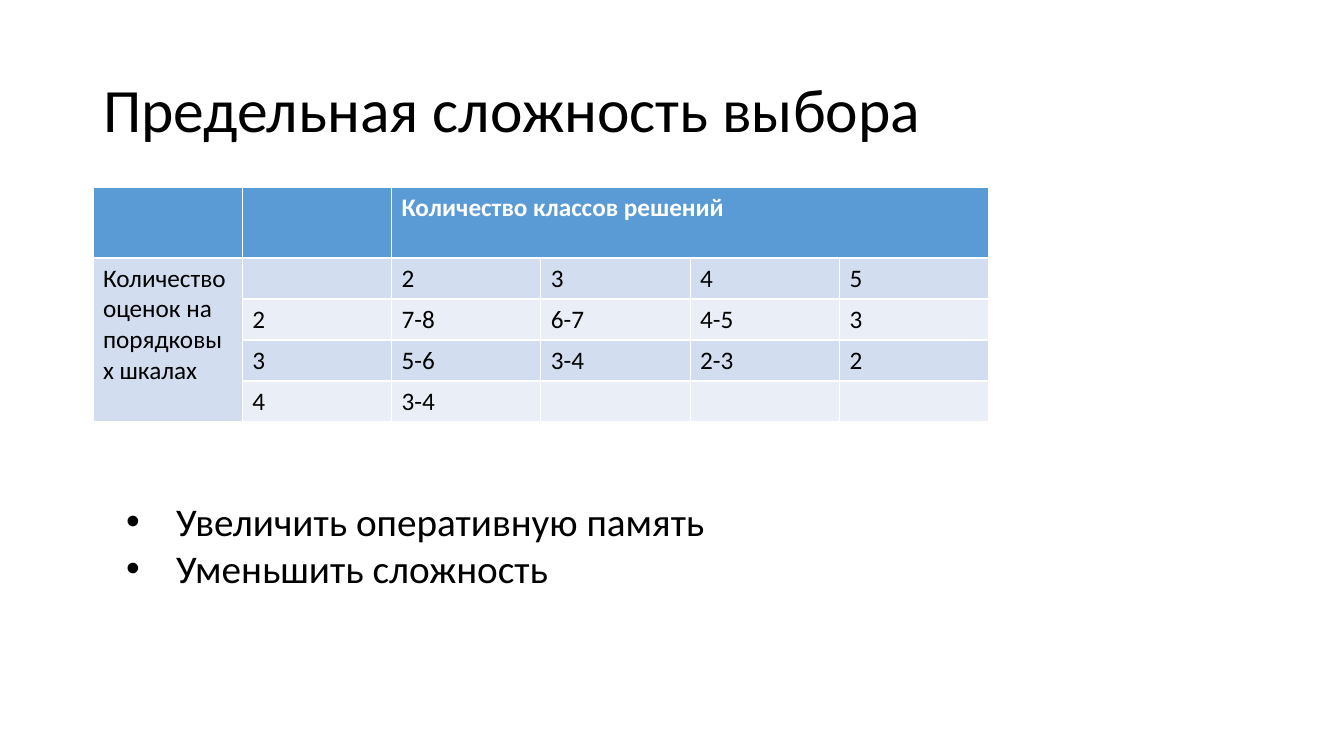
"""Builds the slide on the limits of choice complexity."""
from pptx import Presentation
from pptx.dml.color import RGBColor
from pptx.enum.text import MSO_ANCHOR, PP_ALIGN
from pptx.oxml.ns import qn
from pptx.util import Emu, Pt
from lxml.etree import SubElement

TITLE = "Предельная сложность выбора"
CLASSES_HEADING = "Количество классов решений"
SCALES_HEADING = "Количество оценок на порядковых шкалах"
ROWS = [
    ["", "", CLASSES_HEADING, "", "", ""],
    [SCALES_HEADING, "", "2", "3", "4", "5"],
    ["", "2", "7-8", "6-7", "4-5", "3"],
    ["", "3", "5-6", "3-4", "2-3", "2"],
    ["", "4", "3-4", "", "", ""],
]
MERGES = [((0, 2), (0, 5)), ((1, 0), (4, 0))]
ADVICE = ["Увеличить оперативную память", "Уменьшить сложность"]

FONT = "Calibri"
BLACK = RGBColor(0x00, 0x00, 0x00)
WHITE = RGBColor(0xFF, 0xFF, 0xFF)
HEADER_BLUE = RGBColor(0x5B, 0x9B, 0xD5)
BANDS = [RGBColor(0xEA, 0xEF, 0xF7), RGBColor(0xD2, 0xDE, 0xEF)]

SLIDE_SIZE = (1344, 756)
TITLE_BOX = (93, 40, 1159, 146)
TABLE_BOX = (93, 187, 896, 235)
ADVICE_BOX = (116, 492, 1112, 105)
HEADER_HEIGHT = 71
ROW_HEIGHT = 41
BULLET_INDENT = 50


def px(length):
    """Turn pixels into EMU."""
    return Emu(round(length * 914400 / 100.8))


def place(placeholder, box):
    """Move a placeholder to a box given in pixels."""
    placeholder.left, placeholder.top, placeholder.width, placeholder.height = map(px, box)


def style(paragraph, size, color, bold=False):
    """Set the font of a whole paragraph."""
    font = paragraph.font
    font.name, font.size, font.bold = FONT, Pt(size), bold
    font.color.rgb = color


def add_title(slide):
    """Fill the title placeholder."""
    title = slide.shapes.title
    place(title, TITLE_BOX)
    title.text_frame.text = TITLE
    title.text_frame.vertical_anchor = MSO_ANCHOR.MIDDLE
    heading = title.text_frame.paragraphs[0]
    heading.alignment = PP_ALIGN.LEFT
    heading.line_spacing = 0.9
    style(heading, 44, BLACK)


def add_complexity_table(slide):
    """Add the table of limits."""
    table = slide.shapes.add_table(len(ROWS), len(ROWS[0]), *map(px, TABLE_BOX)).table
    for column in table.columns:
        column.width = px(TABLE_BOX[2] / len(ROWS[0]))
    for r, values in enumerate(ROWS):
        header = r == 0
        table.rows[r].height = px(HEADER_HEIGHT if header else ROW_HEIGHT)
        for c, value in enumerate(values):
            cell = table.cell(r, c)
            cell.text = value
            cell.fill.solid()
            cell.fill.fore_color.rgb = HEADER_BLUE if header else BANDS[r % 2]
            style(cell.text_frame.paragraphs[0], 18, WHITE if header else BLACK, header)
    for first, last in MERGES:
        table.cell(*first).merge(table.cell(*last))


def add_advice(slide):
    """Fill the body placeholder with bullets."""
    advice = slide.placeholders[1]
    place(advice, ADVICE_BOX)
    advice.text_frame.text = "\n".join(ADVICE)
    for item in advice.text_frame.paragraphs:
        item.space_before = Pt(0)
        style(item, 28, BLACK)
        properties = item._p.get_or_add_pPr()
        properties.set("marL", str(px(BULLET_INDENT)))
        properties.set("indent", str(-px(BULLET_INDENT)))
        bullet_font = SubElement(properties, qn("a:buFont"))
        bullet_font.set("typeface", "Arial")
        bullet = SubElement(properties, qn("a:buChar"))
        bullet.set("char", "•")
        properties.append(properties.find(qn("a:defRPr")))


def main():
    """Build and save the slide."""
    deck = Presentation()
    deck.slide_width, deck.slide_height = map(px, SLIDE_SIZE)
    slide = deck.slides.add_slide(deck.slide_layouts[1])
    add_title(slide)
    add_complexity_table(slide)
    add_advice(slide)
    deck.save("out.pptx")


if __name__ == "__main__":
    main()
